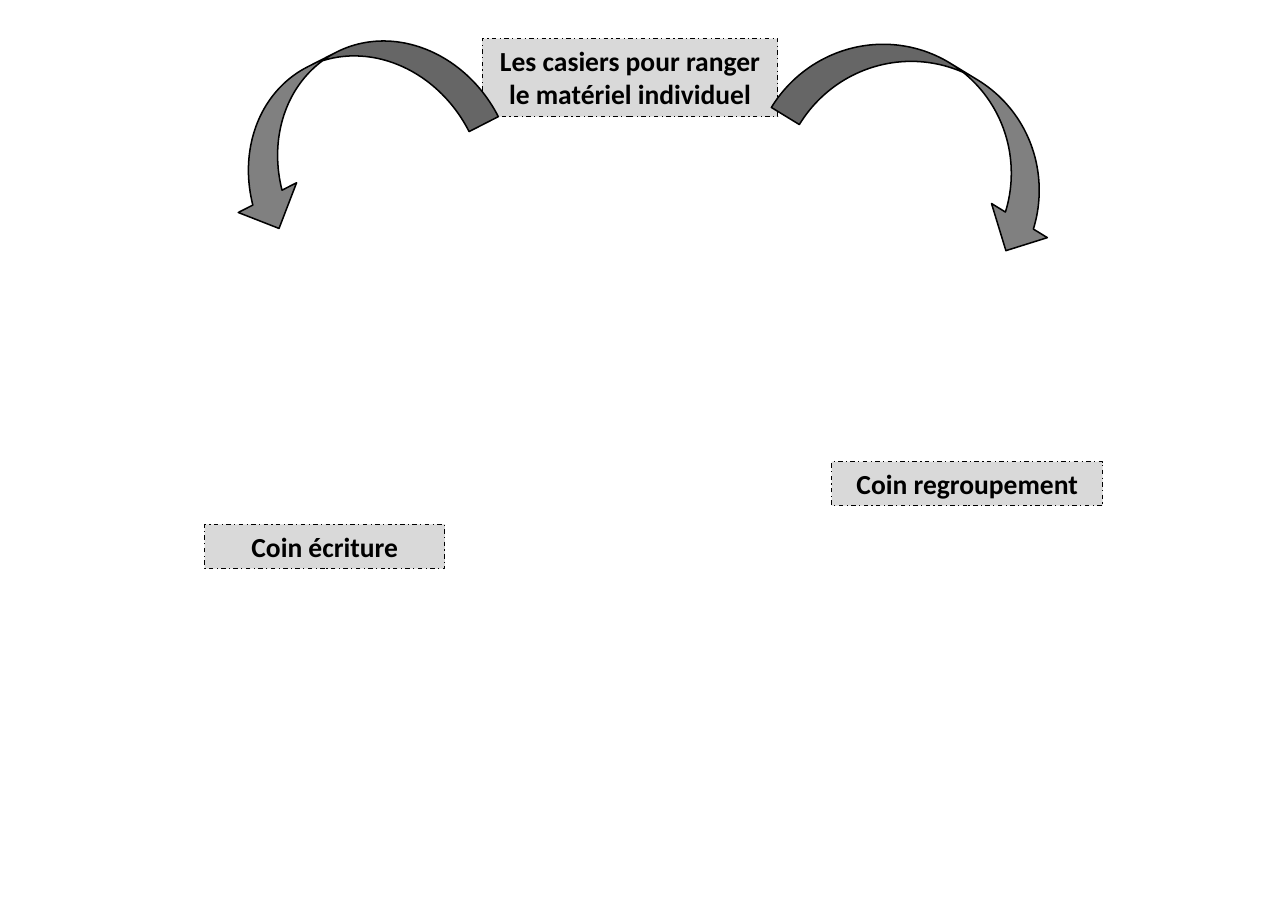
"""Build the slide that labels the classroom areas and their storage."""
from pptx import Presentation, util as u
from pptx.dml.color import RGBColor
from pptx.enum import dml, shapes, text

COLOURS = {"label": "D9D9D9", "arrow": "808080", "ink": "000000"}


def colour(name):
    return RGBColor.from_string(COLOURS[name])


def write(shape, words, size=18, bold=True, font="Calibri", ink="ink"):
    frame = shape.text_frame
    frame.word_wrap = True
    frame.auto_size = text.MSO_AUTO_SIZE.SHAPE_TO_FIT_TEXT
    frame.vertical_anchor = text.MSO_ANCHOR.TOP
    paragraph = frame.paragraphs[0]
    paragraph.alignment = text.PP_ALIGN.CENTER
    run = paragraph.add_run()
    run.text = words
    run.font.name = font
    run.font.size = u.Pt(size)
    run.font.bold = bold
    run.font.color.rgb = colour(ink)


class Board:
    def __init__(self, slide):
        self.slide = slide

    def shape(self, kind, place, fill, line_width):
        shape = self.slide.shapes.add_shape(kind, *map(u.Cm, place))
        shape.shadow.inherit = False
        shape.fill.solid()
        shape.fill.fore_color.rgb = colour(fill)
        shape.line.color.rgb = colour("ink")
        shape.line.width = u.Pt(line_width)
        return shape

    def label(self, words, *place):
        shape = self.shape(shapes.MSO_SHAPE.RECTANGLE, place, "label", 0.75)
        shape.line.dash_style = dml.MSO_LINE.DASH_DOT
        write(shape, words)

    def arrow(self, *place, rotation, flipped=False):
        shape = self.shape(shapes.MSO_SHAPE.CURVED_RIGHT_ARROW, place, "arrow", 1)
        shape.rotation = rotation
        if flipped:
            shape.element.spPr.xfrm.set("flipV", "1")


def main():
    presentation = Presentation()
    presentation.slide_width = u.Cm(29.7)
    presentation.slide_height = u.Cm(21)
    board = Board(presentation.slides.add_slide(presentation.slide_layouts[6]))

    board.label("Les casiers pour ranger le matériel individuel", 11.12, 0.89, 6.82, 1.8)
    board.arrow(6.43, -0.41, 3.02, 6.43, rotation=63)
    board.arrow(20.09, -0.51, 3.02, 7.09, rotation=121.4, flipped=True)
    board.label("Coin écriture", 4.72, 12.09, 5.54, 1.02)
    board.label("Coin regroupement", 19.18, 10.64, 6.25, 1.02)

    presentation.save("out.pptx")


if __name__ == "__main__":
    main()
